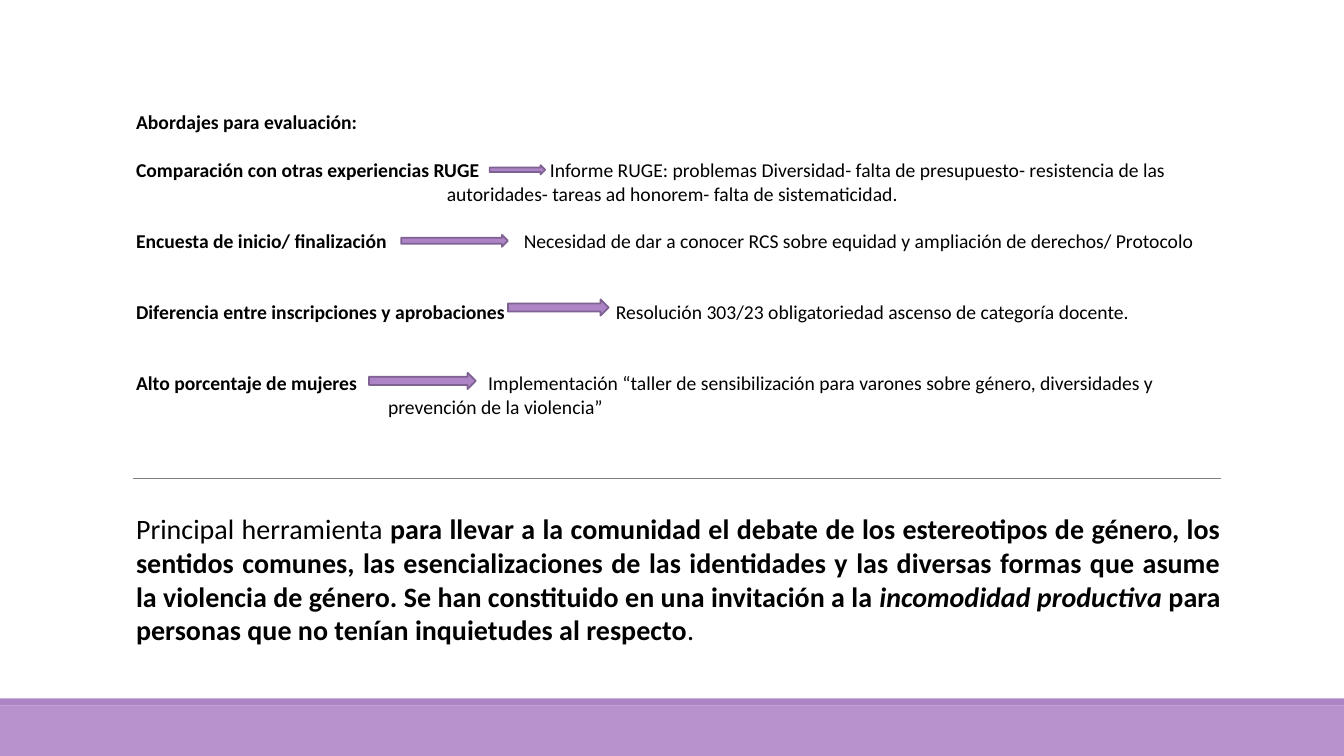
from pptx import Presentation
from pptx.dml.color import RGBColor
from pptx.enum.shapes import MSO_CONNECTOR, MSO_SHAPE
from pptx.enum.text import MSO_ANCHOR, PP_ALIGN
from pptx.util import Cm, Pt
from lxml.etree import SubElement
from pptx.oxml.ns import qn

BLACK = RGBColor(0, 0, 0)
GRAY = RGBColor(0x80, 0x80, 0x80)
PURPLE = RGBColor(0xAD, 0x84, 0xC6)
LILAC = RGBColor(0xB6, 0x93, 0xCD)
PLUM = RGBColor(0x80, 0x62, 0x92)

TITLE = "Abordajes para evaluación:"
# label, detail, detail left, left of its second line, arrow (left, width, height, shift)
ROWS = [
    ("Comparación con otras experiencias RUGE",
     "Informe RUGE: problemas Diversidad- falta de presupuesto- resistencia de las\v"
     "autoridades- tareas ad honorem- falta de sistematicidad.",
     13.86, 11.26, (12.34, 1.4, 0.23, 0)),
    ("Encuesta de inicio/ finalización",
     "Necesidad de dar a conocer RCS sobre equidad y ampliación de derechos/ Protocolo",
     13.2, 13.2, (10.11, 2.69, 0.3, 0)),
    ("Diferencia entre inscripciones y aprobaciones",
     "Resolución 303/23 obligatoriedad ascenso de categoría docente.",
     15.52, 15.52, (12.8, 2.54, 0.41, -0.11)),
    ("Alto porcentaje de mujeres",
     "Implementación “taller de sensibilización para varones sobre género, diversidades y\v"
     "prevención de la violencia”",
     12.3, 9.78, (9.3, 2.69, 0.41, -0.05)),
]
# text, bold, italic
CLOSING = [
    ("Principal herramienta ", False, False),
    ("para llevar a la comunidad el debate de los estereotipos de género, los sentidos "
     "comunes, las esencializaciones de las identidades y las diversas formas que asume "
     "la violencia de género. Se han constituido en una invitación a la ", True, False),
    ("incomodidad productiva", True, True),
    (" para personas que no tenían inquietudes al respecto", True, False),
    (".", False, False),
]
# top, height, colour
BANDS = [(17.78, 1.27, LILAC), (17.6, 0.18, PURPLE)]

WIDE, HIGH = 33.87, 19.05
LEFT, SPAN = 3.43, 27.33
FIRST, STEP = 4.28, 1.79   # centre of the first row, row pitch
LINE = 0.6                 # height of one line of 14 pt text


def place(shape, left, top, width, height):
    shape.left, shape.top = Cm(left), Cm(top)
    shape.width, shape.height = Cm(width), Cm(height)
    frame = shape.text_frame
    frame.margin_left = frame.margin_right = 0
    frame.margin_top = frame.margin_bottom = 0
    frame.vertical_anchor = MSO_ANCHOR.TOP
    frame.word_wrap = True


def style(para, size, bold=None):
    font = para.font
    font.name, font.size, font.bold = "Calibri", Pt(size), bold
    font.color.rgb = BLACK


def add_text(left, top, width, height, text="", size=14, bold=None):
    box = slide.shapes.add_textbox(0, 0, 0, 0)
    place(box, left, top, width, height)
    para = box.text_frame.paragraphs[0]
    para.text = text
    style(para, size, bold)
    return para


def add_solid(kind, left, top, width, height, fill, edge=None):
    shape = slide.shapes.add_shape(kind, Cm(left), Cm(top), Cm(width), Cm(height))
    shape.shadow.inherit = False
    shape.fill.solid()
    shape.fill.fore_color.rgb = fill
    if edge is None:
        shape.line.fill.background()
    else:
        shape.line.color.rgb = edge
        shape.line.width = Pt(1.25)


deck = Presentation()
deck.slide_width, deck.slide_height = Cm(WIDE), Cm(HIGH)
slide = deck.slides.add_slide(deck.slide_layouts[5])

for top, height, fill in BANDS:
    add_solid(MSO_SHAPE.RECTANGLE, 0, top, WIDE, height, fill)

rule = slide.shapes.add_connector(
    MSO_CONNECTOR.STRAIGHT, Cm(3.35), Cm(12.06), Cm(30.78), Cm(12.06))
rule.line.color.rgb = GRAY
rule.line.width = Pt(0.5)
SubElement(rule.element.spPr, qn("a:effectLst"))

title = slide.shapes.title
title.text = TITLE
place(title, LEFT, 2.78, SPAN, LINE)
head = title.text_frame.paragraphs[0]
head.alignment = PP_ALIGN.LEFT
style(head, 14, True)

for i, (label, detail, start, wrap, arrow) in enumerate(ROWS):
    mid = FIRST + i * STEP
    top = mid - LINE / 2
    add_text(LEFT, top, arrow[0] - LEFT, LINE, label, bold=True)
    lines = detail.count("\v") + 1
    para = add_text(wrap, top, LEFT + SPAN - wrap, lines * LINE, detail)
    para._p.get_or_add_pPr().set("indent", str(Cm(start - wrap)))
    left, width, height, shift = arrow
    add_solid(MSO_SHAPE.RIGHT_ARROW, left, mid + shift - height / 2,
              width, height, PURPLE, PLUM)

para = add_text(LEFT, 12.9, SPAN, 3.45, size=20)
para.alignment = PP_ALIGN.JUSTIFY
for text, bold, italic in CLOSING:
    run = para.add_run()
    run.text = text
    run.font.bold, run.font.italic = bold, italic

deck.save("out.pptx")
